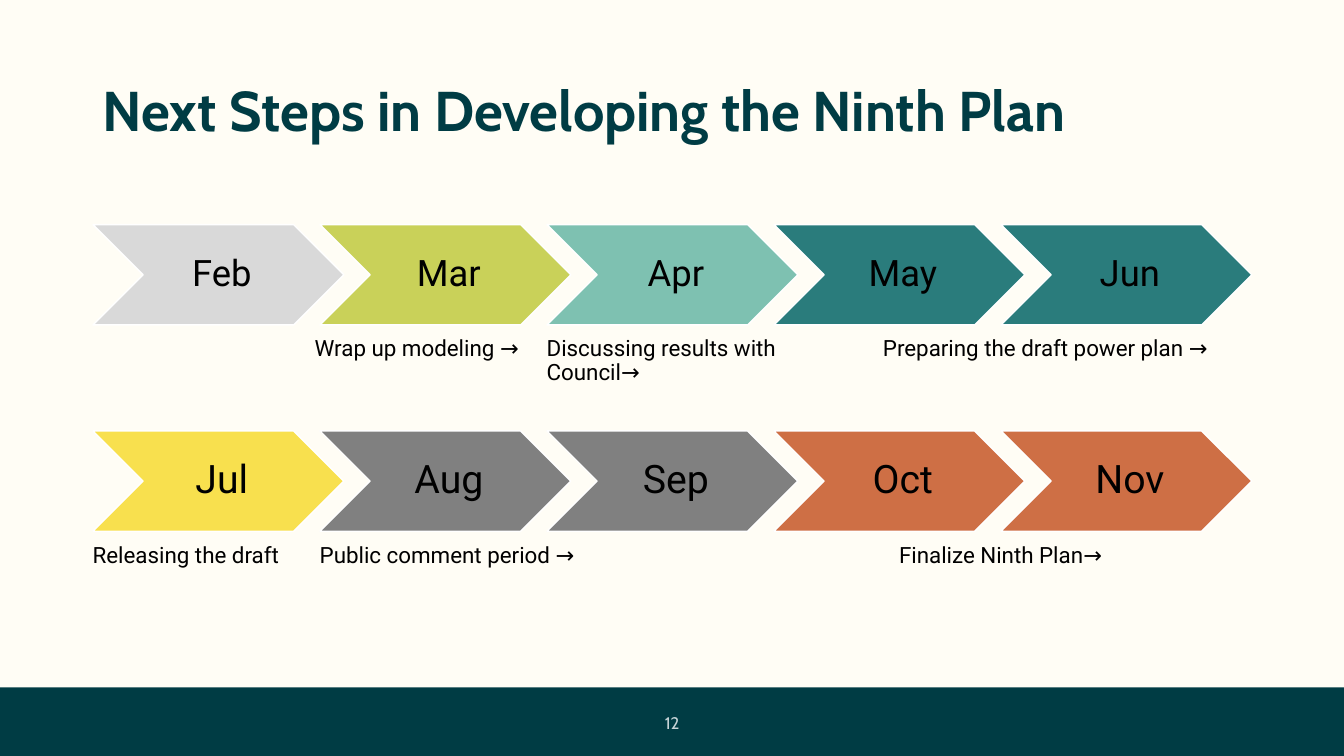
import pptx
import pptx.util
import pptx.dml.color
import pptx.enum.shapes
import pptx.enum.text
from lxml import etree

Pt = pptx.util.Pt
ALIGN = pptx.enum.text.PP_ALIGN
ANCHOR = pptx.enum.text.MSO_ANCHOR
SHAPE = pptx.enum.shapes.MSO_SHAPE

COLORS = {
    "cream": "FFFDF5", "teal_dark": "003C44", "page": "F9FBFD",
    "white": "FFFFFF", "black": "000000", "light": "D9D9D9",
    "lime": "C9D159", "mint": "7EC1B1", "teal": "2A7C7C",
    "yellow": "F8E04E", "gray": "808080", "orange": "CE6F45",
}
TITLE = "Next Steps in Developing the Ninth Plan"
PAGE = "12"
ROWS = [
    {
        "top": 160.4, "size": 26, "caption_height": 24,
        "months": [("Feb", "light"), ("Mar", "lime"), ("Apr", "mint"),
                   ("May", "teal"), ("Jun", "teal")],
        "captions": [("Wrap up modeling →", 224.8, 162),
                     ("Discussing results with Council→", 390.5, 233.28),
                     ("Preparing the draft power plan →", 630.7, 233.28)],
    },
    {
        "top": 307.8, "size": 28, "caption_height": 22.5,
        "months": [("Jul", "yellow"), ("Aug", "gray"), ("Sep", "gray"),
                   ("Oct", "orange"), ("Nov", "orange")],
        "captions": [("Releasing the draft", 66.2, 153.4),
                     ("Public comment period →", 228.4, 341.3),
                     ("Finalize Ninth Plan→", 642.2, 179.2)],
    },
]
LEFT, PITCH = 66.4, 162.15
CHEVRON_W, CHEVRON_H = 179.2, 71.7
CAPTION_DROP = 80.6


def rgb(name):
    return pptx.dml.color.RGBColor.from_string(COLORS[name])


def write(s, text, size, font, color, align=ALIGN.LEFT, anchor=ANCHOR.TOP,
          insets=(0, 0, 0, 0), bold=False, spacing=0.9):
    tf = s.text_frame
    tf.text = text
    tf.word_wrap = True
    tf.vertical_anchor = anchor
    tf.margin_left, tf.margin_top, tf.margin_right, tf.margin_bottom = map(Pt, insets)
    p = tf.paragraphs[0]
    p.alignment = align
    p.line_spacing = spacing
    r = p.runs[0]
    r.font.size = Pt(size)
    r.font.name = font
    r.font.bold = bold
    r.font.color.rgb = rgb(color)
    return r


def add_block(slide, kind, box, fill):
    s = slide.shapes.add_shape(kind, *map(Pt, box))
    s.shadow.inherit = False
    s.fill.solid()
    s.fill.fore_color.rgb = rgb(fill)
    s.line.fill.background()
    return s


def add_text(slide, box, *args, **kwargs):
    return write(slide.shapes.add_textbox(*map(Pt, box)), *args, **kwargs)


def add_row(slide, row):
    for i, (month, fill) in enumerate(row["months"]):
        box = (LEFT + i * PITCH, row["top"], CHEVRON_W, CHEVRON_H)
        s = add_block(slide, SHAPE.CHEVRON, box, fill)
        s.adjustments[0] = 0.5
        s.line.color.rgb = rgb("white")
        s.line.width = Pt(1)
        write(s, month, row["size"], "Roboto", "black", ALIGN.CENTER,
              ANCHOR.MIDDLE, (8, 3, 3, 3))
    for text, left, width in row["captions"]:
        box = (left, row["top"] + CAPTION_DROP, width, row["caption_height"])
        add_text(slide, box, text, 16, "Roboto", "black")


def main():
    prs = pptx.Presentation()
    prs.slide_width, prs.slide_height = Pt(960), Pt(540)
    slide = prs.slides.add_slide(prs.slide_layouts[6])
    slide.background.fill.solid()
    slide.background.fill.fore_color.rgb = rgb("cream")

    add_block(slide, SHAPE.RECTANGLE, (0, 491, 960, 49), "teal_dark")
    r = add_text(slide, (455, 501, 43.2, 31), PAGE, 12, "Cabin", "page",
                 ALIGN.CENTER, ANCHOR.MIDDLE, (7.2, 7.2, 0, 7.2), spacing=1.0)
    tint = r.font.fill.fore_color and r.font._element.find(".//" + pptx.oxml.ns.qn("a:srgbClr"))
    etree.SubElement(tint, pptx.oxml.ns.qn("a:alpha"), val="80000")

    add_text(slide, (66.2, 28.8, 828, 104.4), TITLE, 40, "Cabin", "teal_dark",
             anchor=ANCHOR.MIDDLE, insets=(7.2, 3.6, 7.2, 3.6), bold=True)
    for row in ROWS:
        add_row(slide, row)
    prs.save("out.pptx")


if __name__ == "__main__":
    main()
